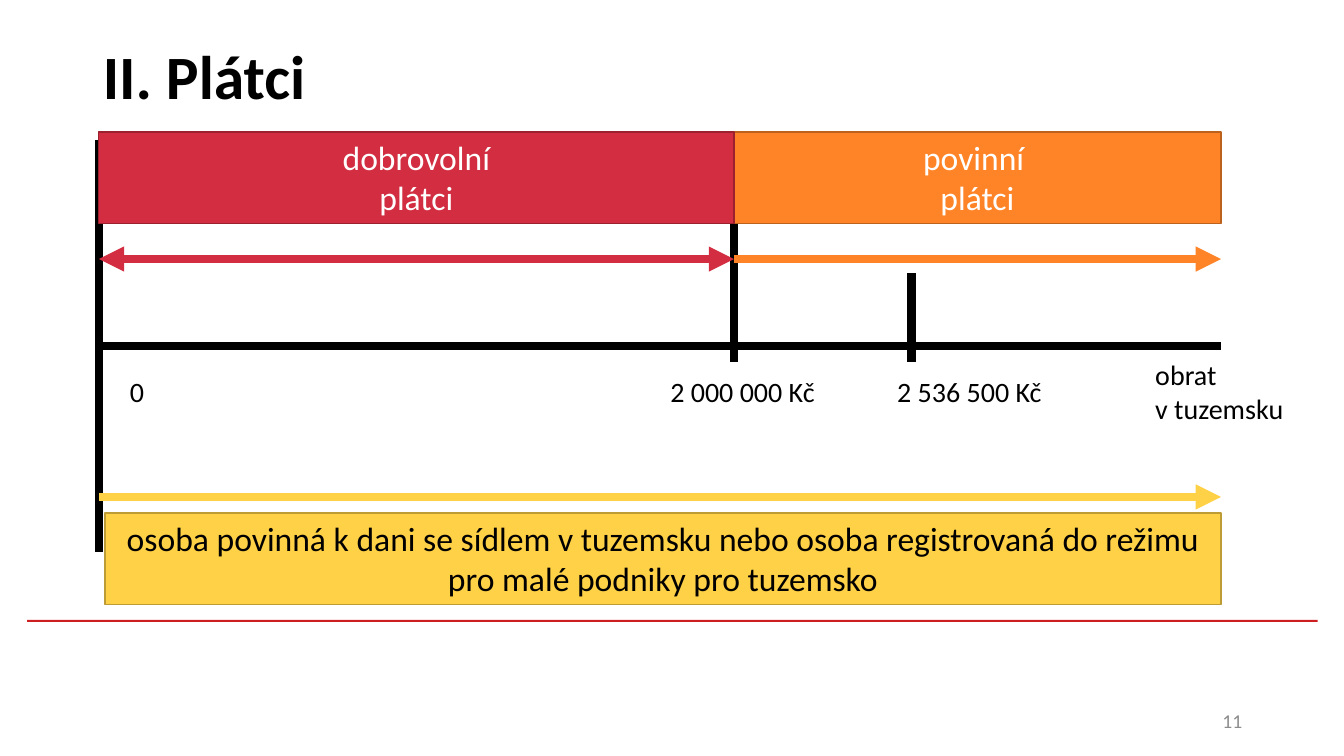
from lxml import etree
from pptx import Presentation
from pptx.dml.color import RGBColor
from pptx.enum import shapes, text
from pptx.oxml.ns import qn
from pptx.util import Inches, Pt

FONT = "Calibri"
BLACK, WHITE, RED, ORANGE, YELLOW = "000000", "FFFFFF", "D22D40", "FF8427", "FFD147"
LEFT, CENTER, RIGHT = text.PP_ALIGN.LEFT, text.PP_ALIGN.CENTER, text.PP_ALIGN.RIGHT

# Grid in inches: turnover marks across, bands and arrows down
ZERO, LIMIT, UPPER, END = 0.98, 7.28, 9.04, 12.11
BAND_TOP, AXIS_TOP, SPLIT, AXIS, TICK_END = 1.31, 1.39, 2.57, 3.43, 3.59
PERSON_ARROW, PERSON_TOP, BAND_HEIGHT = 4.93, 5.09, 0.91
AMOUNT_TAB = 2.25

# Content
TITLE = "II. Plátci"
PAGE = "11"
AXES = [  # from, to
    ((ZERO, AXIS), (END, AXIS)),
    ((ZERO, AXIS_TOP), (ZERO, 5.48)),
    ((LIMIT, AXIS_TOP), (LIMIT, TICK_END)),
    ((UPPER, 2.71), (UPPER, TICK_END)),
]
ARROWS = [  # left, right, row, colour, arrowheads
    (ZERO, LIMIT, SPLIT, RED, ("headEnd", "tailEnd")),
    (LIMIT, END, SPLIT, ORANGE, ("tailEnd",)),
    (ZERO, END, PERSON_ARROW, YELLOW, ("tailEnd",)),
]
BANDS = [  # left, right, top, fill, border, text colour, lines
    (LIMIT, END, BAND_TOP, ORANGE, "BD621D", WHITE, ["povinní ", "plátci"]),
    (1.04, END, PERSON_TOP, YELLOW, "BD9B35", BLACK,
     ["osoba povinná k dani se sídlem v tuzemsku nebo osoba registrovaná "
      "do režimu pro malé podniky pro tuzemsko"]),
    (ZERO, LIMIT, BAND_TOP, RED, "9B212F", WHITE, ["dobrovolní", "plátci"]),
]
LABELS = [  # left, top, width, height, paragraphs
    (1.19, 3.67, 1.26, 0.44, ["0"]),
    (6.55, 3.67, 4.38, 0.44, ["2 000 000 Kč\t2 536 500 Kč"]),
    (11.36, 3.5, 1.86, 0.77, ["obrat", "v tuzemsku"]),
]


def rgb(hex_colour):
    return RGBColor.from_string(hex_colour)


def box(*lengths):
    return [Inches(length) for length in lengths]


def write(paragraph, words, size, colour, align=LEFT, bold=False):
    paragraph.alignment = align
    run = paragraph.add_run()
    run.text = words
    run.font.name, run.font.size, run.font.bold = FONT, Pt(size), bold
    run.font.color.rgb = rgb(colour)


def add_line(slide, start, end, colour, heads=()):
    line = slide.shapes.add_connector(
        shapes.MSO_CONNECTOR.STRAIGHT, *box(*start, *end))
    line.line.color.rgb = rgb(colour)
    line.line.width = Pt(6)
    for head in heads:
        etree.SubElement(line.line._get_or_add_ln(), qn("a:" + head), type="triangle")
    etree.SubElement(line._element.spPr, qn("a:effectLst"))


def add_rectangle(slide, place, fill):
    rectangle = slide.shapes.add_shape(shapes.MSO_SHAPE.RECTANGLE, *box(*place))
    rectangle.shadow.inherit = False
    rectangle.fill.solid()
    rectangle.fill.fore_color.rgb = rgb(fill)
    return rectangle


def add_label(slide, place):
    frame = slide.shapes.add_textbox(*box(*place)).text_frame
    frame.word_wrap = True
    return frame


def main():
    deck = Presentation()
    deck.slide_width, deck.slide_height = box(13.33, 7.5)
    slide = deck.slides.add_slide(deck.slide_layouts[5])

    # Title
    title = slide.shapes.title
    title.left, title.top, title.width, title.height = box(0.92, 0.02, 11.5, 1.45)
    title.text_frame.vertical_anchor = text.MSO_ANCHOR.MIDDLE
    write(title.text_frame.paragraphs[0], TITLE, 44, BLACK, bold=True)

    # Footer rule and page number
    rule = add_rectangle(slide, (0.27, 6.15, 12.8, 0.02), "CD1F21")
    rule.line.fill.background()
    page = add_label(slide, (9.42, 6.95, 3, 0.4))
    page.vertical_anchor = text.MSO_ANCHOR.MIDDLE
    write(page.paragraphs[0], PAGE, 14, "8C8C8C", RIGHT)

    # Turnover axis with its marks, then the ranges
    for start, end in AXES:
        add_line(slide, start, end, BLACK)
    for left, right, row, colour, heads in ARROWS:
        add_line(slide, (left, row), (right, row), colour, heads)

    # Amounts under the axis
    for *place, lines in LABELS:
        label = add_label(slide, place)
        for number, words in enumerate(lines):
            paragraph = label.add_paragraph() if number else label.paragraphs[0]
            if "\t" in words:
                tabs = etree.SubElement(paragraph._p.get_or_add_pPr(), qn("a:tabLst"))
                etree.SubElement(tabs, qn("a:tab"), pos=str(Inches(AMOUNT_TAB)), algn="l")
            write(paragraph, words, 20, BLACK)

    # Payer bands
    for left, right, top, fill, border, colour, lines in BANDS:
        band = add_rectangle(slide, (left, top, right - left, BAND_HEIGHT), fill)
        band.line.color.rgb = rgb(border)
        band.line.width = Pt(1)
        band.text_frame.word_wrap = True
        band.text_frame.vertical_anchor = text.MSO_ANCHOR.TOP
        paragraph = band.text_frame.paragraphs[0]
        for number, words in enumerate(lines):
            if number:
                paragraph.add_line_break()
            write(paragraph, words, 24, colour, CENTER)

    deck.save("out.pptx")


if __name__ == "__main__":
    main()
